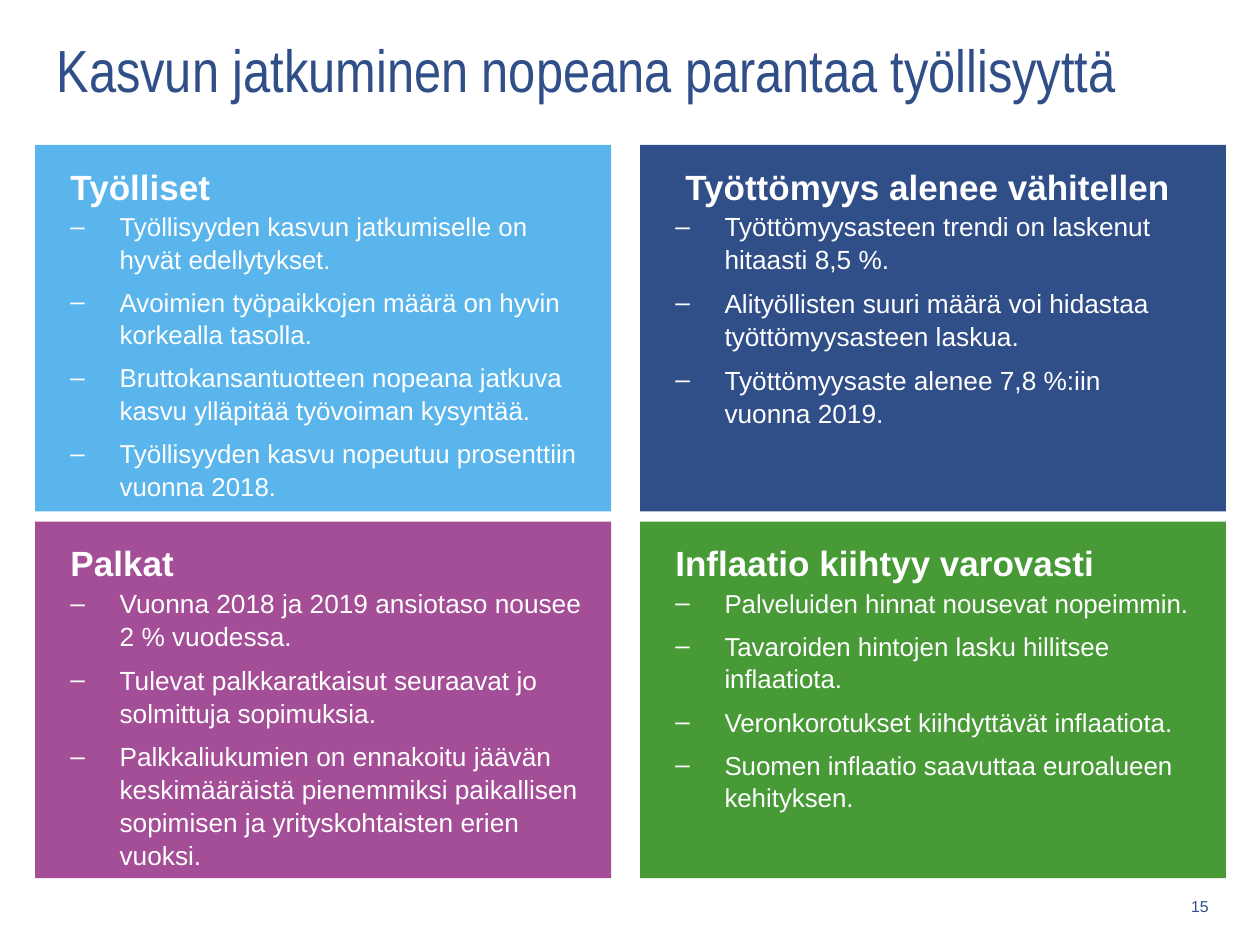
from lxml.etree import SubElement
from pptx import Presentation
from pptx.dml.color import RGBColor
from pptx.enum.shapes import MSO_SHAPE
from pptx.enum.text import MSO_ANCHOR, MSO_AUTO_SIZE, PP_ALIGN
from pptx.oxml.ns import qn
from pptx.util import Inches, Pt

WHITE = RGBColor(0xFF, 0xFF, 0xFF)
NAVY = RGBColor(0x30, 0x4E, 0x88)
SKY = RGBColor(0x5A, 0xB5, 0xEC)
PURPLE = RGBColor(0xA3, 0x4E, 0x96)
GREEN = RGBColor(0x47, 0x9A, 0x36)

TITLE = "Kasvun jatkuminen nopeana parantaa työllisyyttä"
PAGE_NUMBER = "15"

# Heading, fill, text size, heading shift, bullets; row by row
PANELS = [
    ("Työlliset", SKY, 14.8, 0, [
        "Työllisyyden kasvun jatkumiselle on hyvät edellytykset.",
        "Avoimien työpaikkojen määrä on hyvin korkealla tasolla.",
        "Bruttokansantuotteen nopeana jatkuva kasvu ylläpitää työvoiman kysyntää.",
        "Työllisyyden kasvu nopeutuu prosenttiin vuonna 2018.",
    ]),
    ("Työttömyys alenee vähitellen", NAVY, 15, 0.08, [
        "Työttömyysasteen trendi on laskenut hitaasti 8,5 %.",
        "Alityöllisten suuri määrä voi hidastaa työttömyysasteen laskua.",
        "Työttömyysaste alenee 7,8 %:iin\vvuonna 2019.",
    ]),
    ("Palkat", PURPLE, 15, 0, [
        "Vuonna 2018 ja 2019 ansiotaso nousee 2 % vuodessa.",
        "Tulevat palkkaratkaisut seuraavat jo solmittuja sopimuksia.",
        "Palkkaliukumien on ennakoitu jäävän keskimääräistä pienemmiksi "
        "paikallisen sopimisen ja yrityskohtaisten erien vuoksi.",
    ]),
    ("Inflaatio kiihtyy varovasti", GREEN, 14.8, 0, [
        "Palveluiden hinnat nousevat nopeimmin.",
        "Tavaroiden hintojen lasku hillitsee inflaatiota.",
        "Veronkorotukset kiihdyttävät inflaatiota.",
        "Suomen inflaatio saavuttaa euroalueen kehityksen.",
    ]),
]

COLUMNS = [(0.28, 4.57), (5.08, 4.65)]  # left, width
ROWS = [(1.15, 2.91), (4.14, 2.83)]  # top, height
HEADING_HEIGHT = 0.47
BULLET_INDENT = Inches(0.39)


def set_frame(frame, left=0.1, top=0.05, right=0.1, bottom=0.05,
              anchor=MSO_ANCHOR.TOP):
    settings = {
        "margin_left": Inches(left), "margin_top": Inches(top),
        "margin_right": Inches(right), "margin_bottom": Inches(bottom),
        "vertical_anchor": anchor, "word_wrap": True,
        "auto_size": MSO_AUTO_SIZE.NONE,
    }
    for name, value in settings.items():
        setattr(frame, name, value)


def set_font(paragraph, size, color, name="Arial", bold=False):
    font = paragraph.font
    for key, value in {"size": Pt(size), "name": name, "bold": bold}.items():
        setattr(font, key, value)
    font.color.rgb = color


def add_dash_bullet(paragraph):
    properties = paragraph._p.get_or_add_pPr()
    properties.set("marL", str(BULLET_INDENT))
    properties.set("indent", str(-BULLET_INDENT))
    SubElement(properties, qn("a:buFont"), typeface="Arial")
    SubElement(properties, qn("a:buChar"), char="‒")


def add_panel(slide, box, fill, size, bullets):
    panel = slide.shapes.add_shape(MSO_SHAPE.RECTANGLE, *box)
    panel.shadow.inherit = False
    panel.fill.solid()
    panel.fill.fore_color.rgb = fill
    panel.line.fill.background()
    frame = panel.text_frame
    set_frame(frame, 0.28, 0.51, 0.2, 0.2)
    for index, text in enumerate(bullets):
        paragraph = frame.add_paragraph() if index else frame.paragraphs[0]
        paragraph.text = text
        add_dash_bullet(paragraph)
        paragraph.alignment = PP_ALIGN.LEFT
        paragraph.line_spacing = 1.05
        paragraph.space_after = Pt(6)
        set_font(paragraph, size, WHITE)


def add_text(slide, box, text, size, color, bold=False,
             alignment=PP_ALIGN.LEFT, **frame_settings):
    frame = slide.shapes.add_textbox(*box).text_frame
    set_frame(frame, **frame_settings)
    paragraph = frame.paragraphs[0]
    paragraph.text = text
    paragraph.alignment = alignment
    set_font(paragraph, size, color, bold=bold)


def inches(*lengths):
    return [Inches(length) for length in lengths]


def main():
    presentation = Presentation()
    presentation.slide_width, presentation.slide_height = inches(10, 7.5)
    slide = presentation.slides.add_slide(presentation.slide_layouts[5])

    title = slide.shapes.title
    title.left, title.top, title.width, title.height = inches(0.35, 0.21, 9.37, 0.67)
    title.text = TITLE
    set_frame(title.text_frame)
    paragraph = title.text_frame.paragraphs[0]
    paragraph.alignment = PP_ALIGN.LEFT
    set_font(paragraph, 34, NAVY, "Arial Narrow")

    for index, (heading, fill, size, shift, bullets) in enumerate(PANELS):
        row, column = divmod(index, len(COLUMNS))
        left, width = COLUMNS[column]
        top, height = ROWS[row]
        add_panel(slide, inches(left, top, width, height), fill, size, bullets)
        heading_box = inches(left + shift, top, width - shift, HEADING_HEIGHT)
        add_text(slide, heading_box, heading, 20, WHITE, bold=True,
                 left=0.28, top=0.16, right=0.2, bottom=0)

    add_text(slide, inches(9.17, 7.03, 0.52, 0.32), PAGE_NUMBER, 9, NAVY,
             alignment=PP_ALIGN.RIGHT, anchor=MSO_ANCHOR.MIDDLE)
    presentation.save("out.pptx")


if __name__ == "__main__":
    main()
